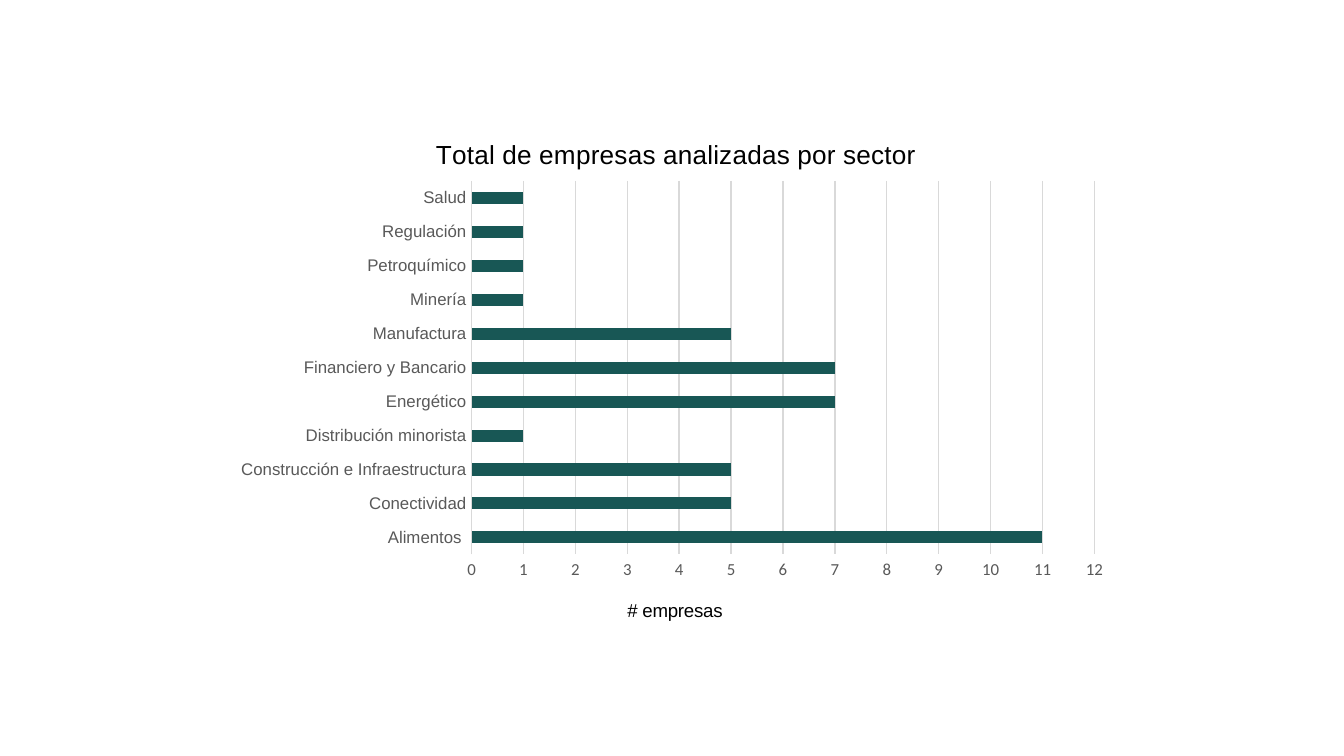
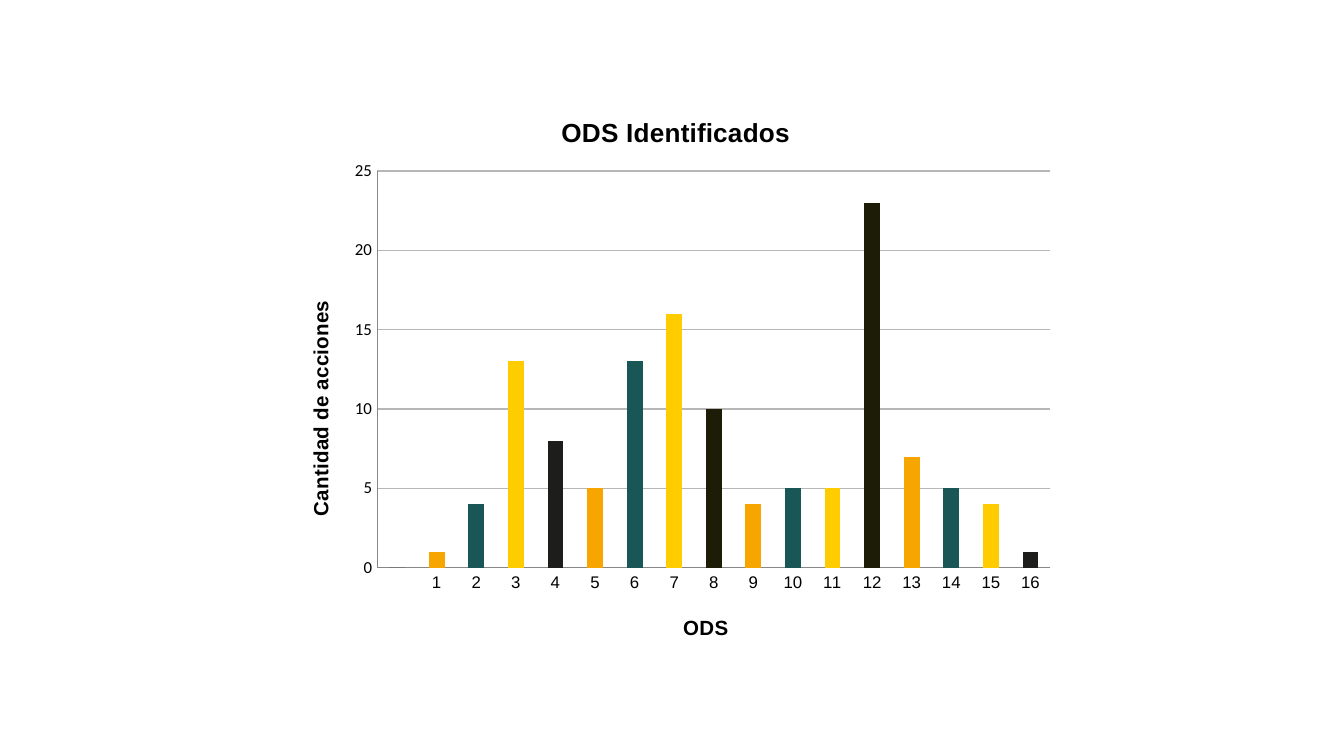
"""Two bar charts about the companies and the ODS goals that were studied."""
from lxml import etree
from pptx import Presentation
from pptx import util as u
from pptx.chart.data import CategoryChartData
from pptx.dml.color import RGBColor
from pptx.enum import chart as kinds
from pptx.oxml.ns import qn

COLORS = {
    "text": "000000", "muted": "595959", "pale": "D9D9D9", "grid": "B7B7B7",
    "teal": "185755", "orange": "F7A500", "yellow": "FFCC00",
    "black": "1D1D1B", "olive": "1D1D07",
}
SECTORS = {
    "Alimentos ": 11, "Conectividad": 5, "Construcción e Infraestructura": 5,
    "Distribución minorista": 1, "Energético": 7, "Financiero y Bancario": 7,
    "Manufactura": 5, "Minería": 1, "Petroquímico": 1, "Regulación": 1, "Salud": 1,
}
GOAL_ACTIONS = [0, 1, 4, 13, 8, 5, 13, 16, 10, 4, 5, 5, 23, 7, 5, 4, 1]
GOAL_CYCLE = ["black", "orange", "teal", "yellow"]
OLIVE_GOALS = (8, 12)


def rgb(name):
    """Return the named colour."""
    return RGBColor.from_string(COLORS[name])


def style_font(font, size, color="text", name="Arial", bold=False):
    """Apply size, colour, typeface and weight to a font."""
    font.size, font.name, font.bold = u.Pt(size), name, bold
    font.color.rgb = rgb(color)


def place(parent, index, inner=False, **percents):
    """Fix the position of a chart part, in percent of the chart."""
    for old in parent.findall(qn("c:layout")):
        parent.remove(old)
    layout = etree.Element(qn("c:layout"))
    manual = etree.SubElement(layout, qn("c:manualLayout"))
    values = {"layoutTarget": "inner"} if inner else {}
    values.update(xMode="edge", yMode="edge")
    values.update({key: value / 100 for key, value in percents.items()})
    for key, value in values.items():
        etree.SubElement(manual, qn(f"c:{key}")).set("val", str(value))
    parent.insert(index, layout)


def write_title(title, words, left, top, **style):
    """Write a chart or axis title at a position in percent."""
    span = title.text_frame.paragraphs[0].add_run()
    span.text = words
    style_font(span.font, **style)
    place(title._element, 1, x=left, y=top)


def style_axis(axis, color, name):
    """Remove the tick marks and set the label font."""
    axis.major_tick_mark = axis.minor_tick_mark = kinds.XL_TICK_MARK.NONE
    style_font(axis.tick_labels.font, 9, color, name)


def add_bar_chart(deck, kind, frame, plot_area, values, top, step, gap, label_color, grid_color):
    """Add a blank page with a one-series bar chart and return the chart."""
    page = deck.slides.add_slide(deck.slide_layouts[6])
    data = CategoryChartData()
    data.categories = [label for label, _ in values]
    data.add_series("Series 1", [value for _, value in values])
    chart = page.shapes.add_chart(kind, *map(u.Cm, frame), data).chart
    style_font(chart.font, 10, name="Calibri")
    chart.has_legend = False
    plot = chart.plots[0]
    plot.gap_width, plot.vary_by_categories = gap, False
    style_axis(chart.category_axis, label_color, "Arial")
    axis = chart.value_axis
    style_axis(axis, label_color, "Calibri")
    axis.minimum_scale, axis.maximum_scale, axis.major_unit = 0, top, step
    axis.has_major_gridlines = True
    line = axis.major_gridlines.format.line
    line.color.rgb, line.width = rgb(grid_color), u.Pt(0.75)
    place(chart._chartSpace.chart.plotArea, 0, inner=True, **plot_area)
    return chart


def add_sector_page(deck):
    """Show how many companies each sector has."""
    chart = add_bar_chart(
        deck, kinds.XL_CHART_TYPE.BAR_CLUSTERED, (4.22, 2.06, 16.94, 10.16),
        dict(x=27.7, y=13.4, w=69.5, h=69.5), list(SECTORS.items()),
        top=12, step=1, gap=182, label_color="muted", grid_color="pale")
    write_title(chart.chart_title, "Total de empresas analizadas por sector", 23.2, 4.5, size=14)
    write_title(chart.value_axis.axis_title, "# empresas", 44.7, 90.5, size=10)
    chart.value_axis.format.line.fill.background()
    line = chart.category_axis.format.line
    line.color.rgb, line.width = rgb("pale"), u.Pt(0.75)
    fill = chart.plots[0].series[0].format.fill
    fill.solid()
    fill.fore_color.rgb = rgb("teal")


def add_goal_page(deck):
    """Show how many actions each goal has."""
    values = [(str(goal or ""), count) for goal, count in enumerate(GOAL_ACTIONS)]
    chart = add_bar_chart(
        deck, kinds.XL_CHART_TYPE.COLUMN_STACKED, (5.26, 1.63, 14.86, 10.9),
        dict(x=12.6, y=14.7, w=85.6, h=68.8), values,
        top=25, step=5, gap=150, label_color="text", grid_color="grid")
    chart.plots[0].overlap = 100
    write_title(chart.chart_title, "ODS Identificados", 35.4, 4.3, size=14, bold=True)
    write_title(chart.category_axis.axis_title, "ODS", 51, 90.8, size=11, bold=True)
    write_title(chart.value_axis.axis_title, "Cantidad de acciones", 3.1, 36.5, size=11, bold=True)
    series = chart.plots[0].series[0]
    for goal in range(len(values)):
        fill = series.points[goal].format.fill
        fill.solid()
        fill.fore_color.rgb = rgb("olive" if goal in OLIVE_GOALS else GOAL_CYCLE[goal % 4])


def main():
    """Build and save the deck."""
    deck = Presentation()
    deck.slide_width, deck.slide_height = u.Cm(25.4), u.Cm(14.29)
    add_sector_page(deck)
    add_goal_page(deck)
    deck.save("out.pptx")


if __name__ == "__main__":
    main()
